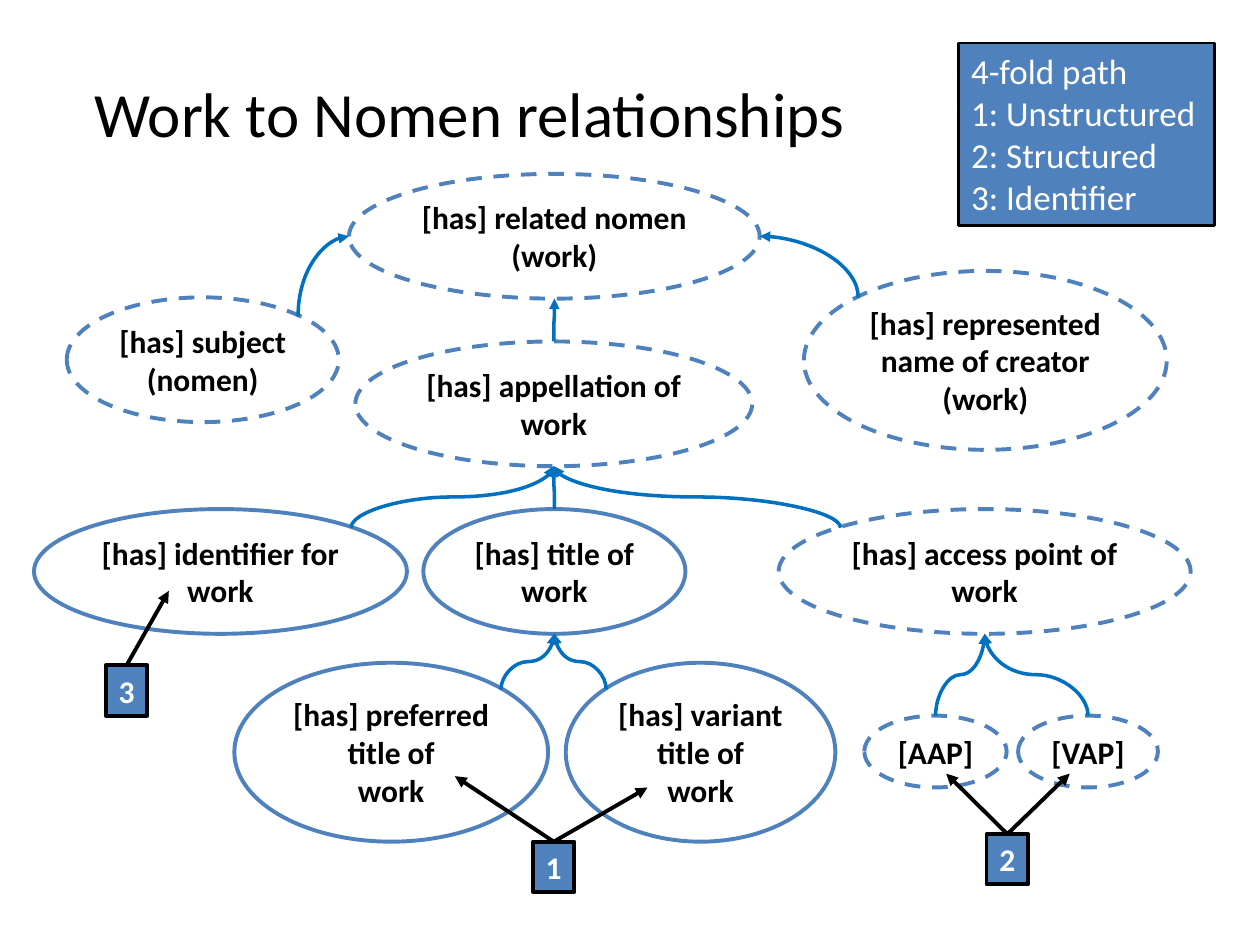
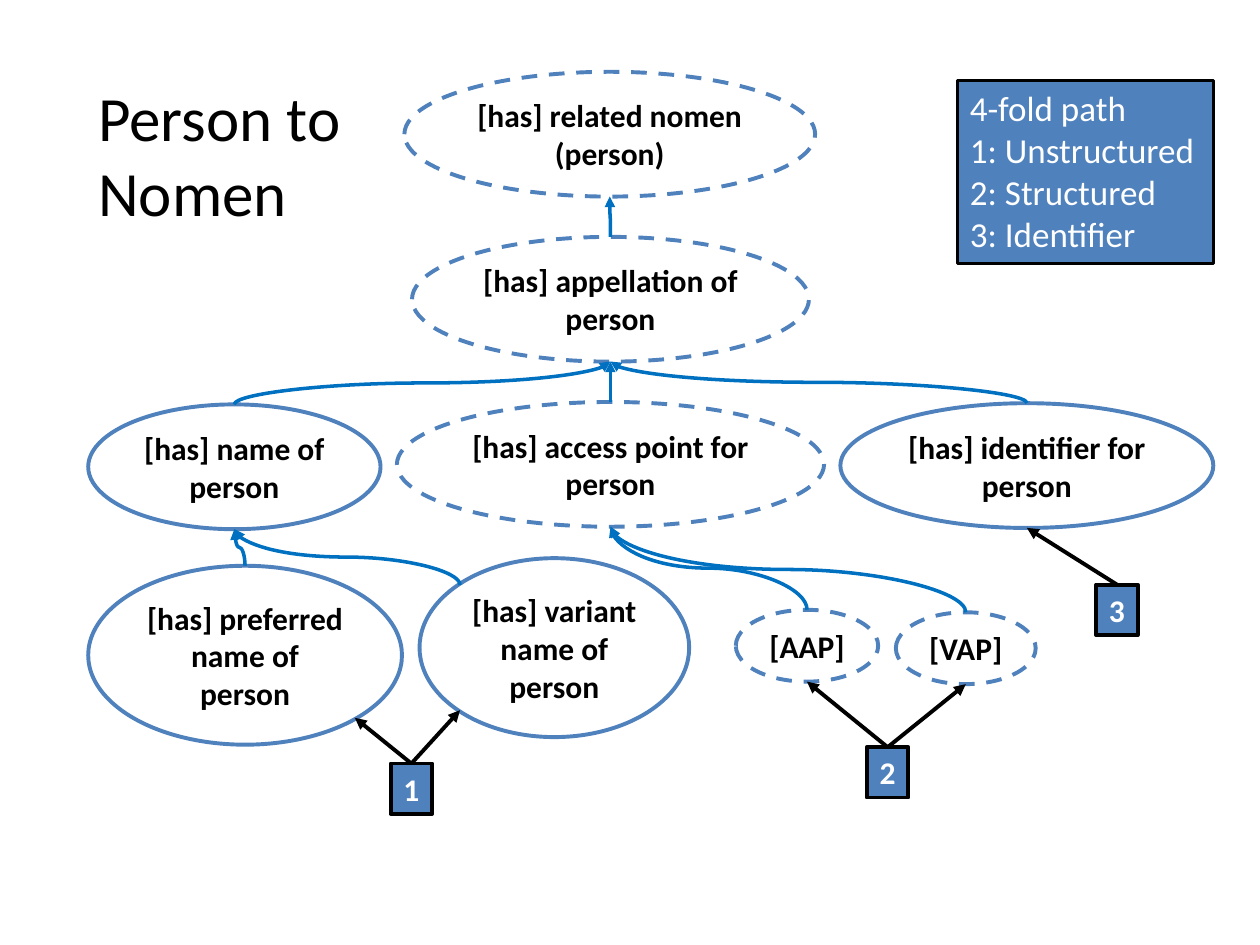
import pptx
import pptx.util
import pptx.dml.color
import pptx.enum.dml
import pptx.enum.shapes
import pptx.enum.text
import pptx.oxml
from pptx.util import Inches

BLUE, CURVE_BLUE, BLACK, WHITE = "4F81BD", "0070C0", "000000", "FFFFFF"
FONT = "Calibri"
TITLE_ONLY = 5
TWO_LINES, THREE_LINES, ONE_LINE = 0.99, 1.42, 0.57  # ellipse heights
DIAGONAL = 0.35  # offset of a 45 degree point, as a share of the ellipse's size
SITES = {
    "top": (0, -0.5), "bottom": (0, 0.5), "left": (-0.5, 0), "right": (0.5, 0),
    "top left": (-DIAGONAL, -DIAGONAL), "top right": (DIAGONAL, -DIAGONAL),
    "bottom left": (-DIAGONAL, DIAGONAL), "bottom right": (DIAGONAL, DIAGONAL),
}
LEGEND = ["4-fold path", "1: Unstructured", "2: Structured", "3: Identifier"]


def color(hex_string):
    return pptx.dml.color.RGBColor.from_string(hex_string)


def site(shape, name):
    """Return the named point on the outline of a shape."""
    across, down = SITES[name]
    return (int(shape.left + shape.width * (0.5 + across)),
            int(shape.top + shape.height * (0.5 + down)))


class Diagram:
    """Holds the presentation, its style and the current slide."""

    def __init__(self):
        self.presentation = pptx.Presentation()
        self.presentation.slide_width = Inches(10)
        self.presentation.slide_height = Inches(7.5)
        self.slide = None

    def add_slide(self, title_lines, left, top, width, height):
        layout = self.presentation.slide_layouts[TITLE_ONLY]
        self.slide = self.presentation.slides.add_slide(layout)
        title = self.slide.shapes.title
        title.left, title.top = Inches(left), Inches(top)
        title.width, title.height = Inches(width), Inches(height)
        title.text_frame.auto_size = pptx.enum.text.MSO_AUTO_SIZE.NONE
        self.add_text(title, title_lines, 36, BLACK, centred=False)

    def add_text(self, shape, lines, size, text_color, bold=False, centred=True, wrap=False):
        align = pptx.enum.text.PP_ALIGN
        anchor = pptx.enum.text.MSO_ANCHOR
        frame = shape.text_frame
        frame.word_wrap = wrap
        frame.vertical_anchor = anchor.MIDDLE if centred else anchor.TOP
        for index, line in enumerate(lines):
            paragraph = frame.add_paragraph() if index else frame.paragraphs[0]
            paragraph.alignment = align.CENTER if centred else align.LEFT
            run = paragraph.add_run()
            run.text = line
            run.font.name = FONT
            run.font.size = pptx.util.Pt(size)
            run.font.bold = bold
            run.font.color.rgb = color(text_color)

    def outlined(self, kind, left, top, width, height, line_color, line_width):
        shape = self.slide.shapes.add_shape(
            kind, Inches(left), Inches(top), Inches(width), Inches(height))
        shape.shadow.inherit = False
        shape.line.color.rgb = color(line_color)
        shape.line.width = pptx.util.Pt(line_width)
        return shape

    def ellipse(self, lines, left, top, width, height=TWO_LINES, dashed=True):
        kind = pptx.enum.shapes.MSO_SHAPE.OVAL
        shape = self.outlined(kind, left, top, width, height, BLUE, 2.25)
        shape.fill.background()
        if dashed:
            shape.line.dash_style = pptx.enum.dml.MSO_LINE.DASH
        self.add_text(shape, lines, 18, BLACK, bold=True)
        return shape

    def box(self, left, top, width, height, line_width):
        kind = pptx.enum.shapes.MSO_SHAPE.RECTANGLE
        shape = self.outlined(kind, left, top, width, height, BLACK, line_width)
        shape.fill.solid()
        shape.fill.fore_color.rgb = color(BLUE)
        return shape

    def legend(self, left, top):
        shape = self.box(left, top, 2.03, 1.45, 1.5)
        self.add_text(shape, LEGEND, 20, WHITE, centred=False, wrap=True)

    def number(self, text, left, top):
        shape = self.box(left, top, 0.33, 0.4, 2.25)
        self.add_text(shape, [text], 18, WHITE, bold=True)
        return shape

    def connector(self, kind, start, end, line_color, line_width):
        connector = self.slide.shapes.add_connector(kind, *start, *end)
        connector.line.color.rgb = color(line_color)
        connector.line.width = pptx.util.Pt(line_width)
        properties = connector._element.spPr
        tail = pptx.oxml.parse_xml(
            '<a:tailEnd xmlns:a="http://schemas.openxmlformats.org/drawingml/2006/main"'
            ' type="triangle"/>')
        properties.find(pptx.oxml.ns.qn("a:ln")).append(tail)
        properties.append(pptx.oxml.parse_xml(
            '<a:effectLst xmlns:a="http://schemas.openxmlformats.org/drawingml/2006/main"/>'))
        return connector

    def straight(self, start, end):
        kind = pptx.enum.shapes.MSO_CONNECTOR.STRAIGHT
        self.connector(kind, start, end, BLACK, 2.25)

    def curve(self, child, child_site, parent, parent_site="bottom"):
        """Draw a curve that leaves the child upwards, as a connector turned a quarter."""
        start, end = site(child, child_site), site(parent, parent_site)
        middle_x, middle_y = (start[0] + end[0]) // 2, (start[1] + end[1]) // 2
        half_rise, half_run = (start[1] - end[1]) // 2, abs(end[0] - start[0]) // 2
        rightward = end[0] > start[0]
        along = half_rise if rightward else -half_rise
        connector = self.connector(
            pptx.enum.shapes.MSO_CONNECTOR.CURVE,
            (middle_x + along, middle_y + half_run),
            (middle_x - along, middle_y - half_run), CURVE_BLUE, 2)
        properties = connector._element.spPr
        degrees = 90 if rightward else 270
        properties.find(pptx.oxml.ns.qn("a:xfrm")).set("rot", str(degrees * 60000))
        if parent_site in ("left", "right"):
            geometry = properties.find(pptx.oxml.ns.qn("a:prstGeom"))
            geometry.set("prst", "curvedConnector2")


def build_work(diagram):
    diagram.add_slide(["Work to Nomen relationships"], 0.65, 0.54, 6.21, 0.71)
    related = diagram.ellipse(["[has] related nomen", "(work)"], 2.77, 1.38, 3.26)
    subject = diagram.ellipse(["[has] subject", "(nomen)"], 0.53, 2.36, 2.16)
    creator = diagram.ellipse(["[has] represented", "name of creator", "(work)"],
                              6.38, 2.15, 2.88, THREE_LINES)
    appellation = diagram.ellipse(["[has] appellation of", "work"], 2.82, 2.71, 3.15)
    identifier = diagram.ellipse(["[has] identifier for", "work"], 0.27, 4.04, 2.96,
                                 dashed=False)
    title = diagram.ellipse(["[has] title of", "work"], 3.36, 4.04, 2.08, dashed=False)
    access_point = diagram.ellipse(["[has] access point of", "work"], 6.18, 4.04, 3.27)
    preferred = diagram.ellipse(["[has] preferred", "title of", "work"],
                                1.86, 5.26, 2.49, THREE_LINES, dashed=False)
    variant = diagram.ellipse(["[has] variant", "title of", "work"],
                              4.49, 5.26, 2.14, THREE_LINES, dashed=False)
    aap = diagram.ellipse(["[AAP]"], 6.86, 5.68, 1.13, ONE_LINE)
    vap = diagram.ellipse(["[VAP]"], 8.08, 5.68, 1.11, ONE_LINE)

    diagram.curve(subject, "top right", related, "left")
    diagram.curve(creator, "top left", related, "right")
    diagram.curve(appellation, "top", related)
    diagram.curve(identifier, "top right", appellation)
    diagram.curve(title, "top", appellation)
    diagram.curve(access_point, "top left", appellation)
    diagram.curve(preferred, "top right", title)
    diagram.curve(variant, "top left", title)
    diagram.curve(aap, "top", access_point)
    diagram.curve(vap, "top", access_point)

    diagram.legend(7.61, 0.34)
    for text, left, top, targets in [
        ("1", 4.23, 6.68, [(3.61, 6.16), (5.14, 6.25)]),
        ("2", 7.83, 6.62, [(7.51, 6.14), (8.49, 6.14)]),
        ("3", 0.84, 5.28, [(1.34, 4.69)]),
    ]:
        number = diagram.number(text, left, top)
        for x, y in targets:
            diagram.straight(site(number, "top"), (Inches(x), Inches(y)))


def build_person(diagram):
    diagram.add_slide(["Person to", "Nomen"], 0.68, 0.57, 2.14, 1.31)
    related = diagram.ellipse(["[has] related nomen", "(person)"], 3.21, 0.57, 3.26)
    appellation = diagram.ellipse(["[has] appellation of", "person"], 3.27, 1.88, 3.15)
    name = diagram.ellipse(["[has] name of", "person"], 0.7, 3.21, 2.32, dashed=False)
    access_point = diagram.ellipse(["[has] access point for", "person"], 3.15, 3.19, 3.39)
    identifier = diagram.ellipse(["[has] identifier for", "person"], 6.67, 3.2, 2.96,
                                 dashed=False)
    preferred = diagram.ellipse(["[has] preferred", "name of", "person"],
                                0.7, 4.49, 2.49, THREE_LINES, dashed=False)
    variant = diagram.ellipse(["[has] variant", "name of", "person"],
                              3.33, 4.43, 2.14, THREE_LINES, dashed=False)
    aap = diagram.ellipse(["[AAP]"], 5.84, 4.84, 1.13, ONE_LINE)
    vap = diagram.ellipse(["[VAP]"], 7.11, 4.86, 1.11, ONE_LINE)

    diagram.curve(appellation, "top", related)
    for child in (name, access_point, identifier):
        diagram.curve(child, "top", appellation)
    diagram.curve(preferred, "top", name)
    diagram.curve(variant, "top left", name)
    for child in (aap, vap):
        diagram.curve(child, "top", access_point)

    diagram.legend(7.6, 0.64)
    for text, left, top, targets in [
        ("1", 3.1, 6.06, [(preferred, "bottom right"), (variant, "bottom left")]),
        ("2", 6.88, 5.93, [(aap, "bottom"), (vap, "bottom")]),
        ("3", 8.7, 4.64, [(identifier, "bottom")]),
    ]:
        number = diagram.number(text, left, top)
        for target, target_site in targets:
            diagram.straight(site(number, "top"), site(target, target_site))


def main():
    diagram = Diagram()
    build_work(diagram)
    build_person(diagram)
    diagram.presentation.save("out.pptx")


if __name__ == "__main__":
    main()
